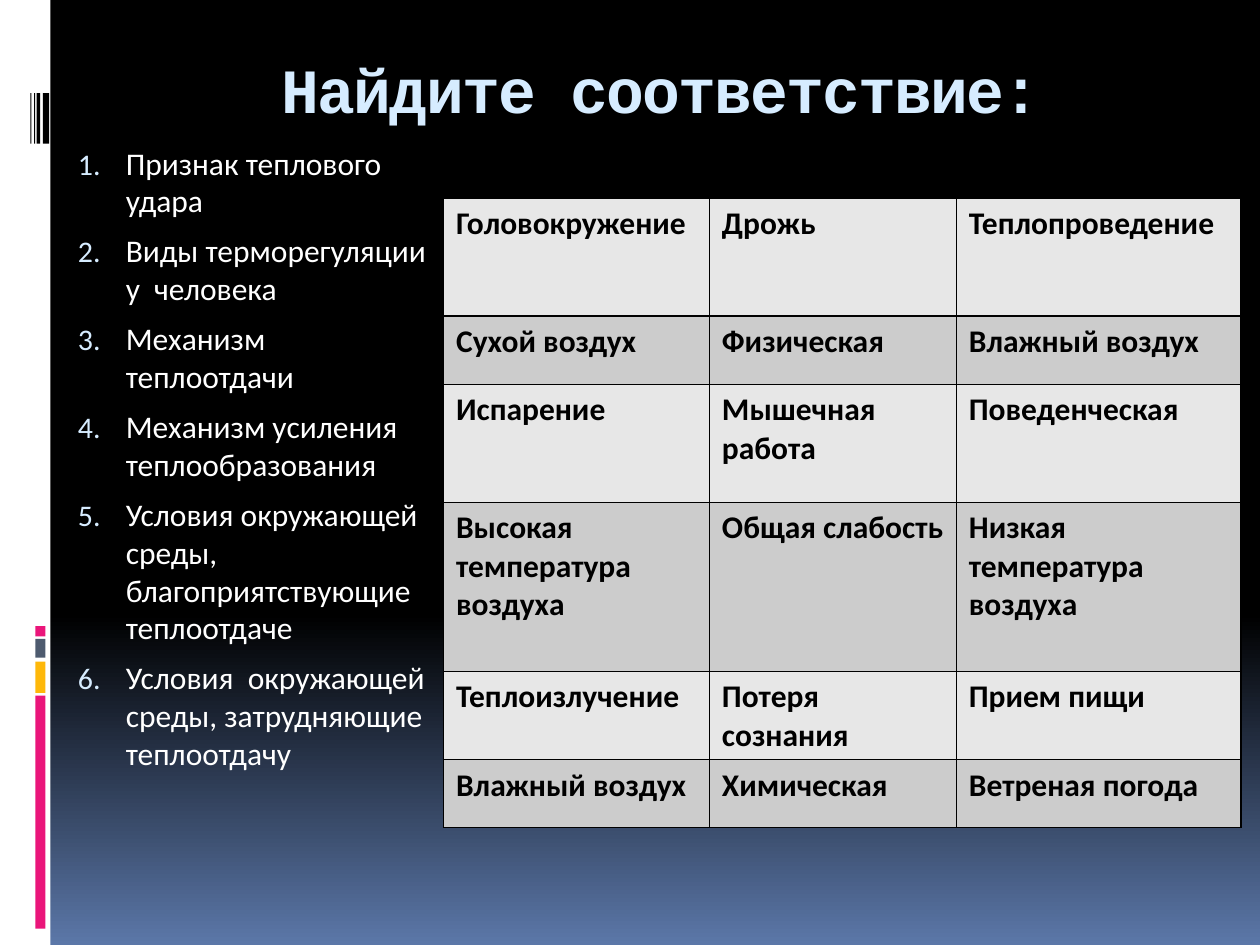
from copy import deepcopy
from dataclasses import dataclass

from lxml.etree import SubElement
from pptx import Presentation
from pptx.dml.color import RGBColor
from pptx.enum.shapes import MSO_SHAPE as Shape
from pptx.enum.text import MSO_ANCHOR as Anchor, PP_ALIGN as Align
from pptx.oxml.ns import qn
from pptx.util import Inches, Pt


@dataclass(frozen=True)
class Theme:
    black: str = "000000"
    white: str = "FFFFFF"
    sky: str = "D6ECFF"
    blue: str = "5B77A8"
    pink: str = "EA157A"
    amber: str = "FEB80A"
    slate: str = "4E5B6F"
    bands: tuple = ("E7E7E7", "CCCCCC")
    title_font: str = "Courier New"
    body_font: str = "Calibri"
    title_size: int = 36
    body_size: int = 18


THEME = Theme()

# Content
TITLE = "Найдите соответствие:"
QUESTIONS = [
    "Признак теплового удара",
    "Виды терморегуляции у  человека",
    "Механизм теплоотдачи",
    "Механизм усиления  теплообразования",
    "Условия окружающей среды,  благоприятствующие теплоотдаче",
    "Условия  окружающей среды, затрудняющие теплоотдачу",
]
ANSWERS = [
    ("Головокружение", "Дрожь", "Теплопроведение"),
    ("Сухой воздух", "Физическая", "Влажный воздух"),
    ("Испарение ", "Мышечная работа", "Поведенческая"),
    ("Высокая температура воздуха", "Общая слабость", "Низкая температура воздуха"),
    ("Теплоизлучение", "Потеря сознания", "Прием пищи"),
    ("Влажный воздух", "Химическая", "Ветреная погода"),
]
COLUMN_WIDTHS = (2.11, 1.96, 2.26)
ROW_HEIGHTS = (0.94, 0.54, 0.94, 1.34, 0.54, 0.54)

# Side decoration: (top, height, colour) and (left, width)
BLOCKS = [
    (5.52, 1.85, THEME.pink),
    (5.25, 0.25, THEME.amber),
    (5.07, 0.15, THEME.slate),
    (4.97, 0.08, THEME.pink),
]
STRIPES = [(0.34, 0.05), (0.29, 0.03), (0.27, 0.01), (0.24, 0.01)]


def rgb(value):
    return RGBColor.from_string(value)


def add_bar(page, left, top, width, height, color):
    bar = page.shapes.add_shape(Shape.RECTANGLE, *map(Inches, (left, top, width, height)))
    bar.shadow.inherit = False
    bar.fill.solid()
    bar.fill.fore_color.rgb = rgb(color)
    bar.line.fill.background()


def add_frame(page, left, top, width, height, anchor):
    frame = page.shapes.add_textbox(*map(Inches, (left, top, width, height))).text_frame
    frame.word_wrap = True
    frame.vertical_anchor = anchor
    return frame


def add_span(para, text, color, font=THEME.body_font, size=THEME.body_size, bold=False):
    span = para.add_run()
    span.text = text
    span.font.name, span.font.size, span.font.bold = font, Pt(size), bold
    span.font.color.rgb = rgb(color)
    return span


def number(para):
    props = para._p.get_or_add_pPr()
    props.set("marL", str(Inches(0.43)))
    props.set("indent", str(Inches(-0.38)))
    color = SubElement(props, qn("a:buClr"))
    SubElement(color, qn("a:srgbClr"), val=THEME.sky)
    SubElement(props, qn("a:buSzPct"), val="95000")
    SubElement(props, qn("a:buFont"), typeface=THEME.body_font)
    SubElement(props, qn("a:buAutoNum"), type="arabicPeriod")


def add_borders(cell):
    props = cell._tc.get_or_add_tcPr()
    for index, side in enumerate(("lnL", "lnR", "lnT", "lnB")):
        line = props.makeelement(qn(f"a:{side}"), {"w": str(Pt(1))})
        fill = SubElement(line, qn("a:solidFill"))
        SubElement(fill, qn("a:srgbClr"), val=THEME.black)
        props.insert(index, line)


deck = Presentation()
deck.slide_width, deck.slide_height = Inches(10), Inches(7.5)
page = deck.slides.add_slide(deck.slide_layouts[6])

# Background: black down to 65 %, then fading to blue
backdrop = page.background.fill
backdrop.gradient()
backdrop.gradient_angle = 270
for stop, position, color in zip(backdrop.gradient_stops, (0.65, 1), (THEME.black, THEME.blue)):
    stop.position = position
    stop.color.rgb = rgb(color)
stop_list = next(page.element.iter(qn("a:gsLst")))
first_stop = deepcopy(stop_list[0])
first_stop.set("pos", "0")
stop_list.insert(0, first_stop)

# Side strip
add_bar(page, 0, 0, 0.4, 7.5, THEME.white)
for top, height, color in BLOCKS:
    add_bar(page, 0.28, top, 0.08, height, color)
for left, width in STRIPES:
    add_bar(page, left, 0.74, width, 0.4, THEME.black)

# Title
para = add_frame(page, 0.75, 0.3, 9, 0.8, Anchor.MIDDLE).paragraphs[0]
para.alignment = Align.CENTER
span = add_span(para, TITLE, THEME.sky, THEME.title_font, THEME.title_size, True)
span.font._element.set("spc", "-100")

# Numbered questions
frame = add_frame(page, 0.47, 1.09, 3.03, 6.41, Anchor.TOP)
for index, question in enumerate(QUESTIONS):
    para = frame.add_paragraph() if index else frame.paragraphs[0]
    para.space_before = Pt(7)
    number(para)
    add_span(para, question, THEME.white)

# Answer table
table = page.shapes.add_table(
    len(ANSWERS), len(COLUMN_WIDTHS), Inches(3.52), Inches(1.57),
    Inches(sum(COLUMN_WIDTHS)), Inches(sum(ROW_HEIGHTS)),
).table
for column, width in zip(table.columns, COLUMN_WIDTHS):
    column.width = Inches(width)
for index, (row, height, answers) in enumerate(zip(table.rows, ROW_HEIGHTS, ANSWERS)):
    row.height = Inches(height)
    for cell, answer in zip(row.cells, answers):
        cell.fill.solid()
        cell.fill.fore_color.rgb = rgb(THEME.bands[index % 2])
        add_borders(cell)
        add_span(cell.text_frame.paragraphs[0], answer, THEME.black, bold=True)

deck.save("out.pptx")
